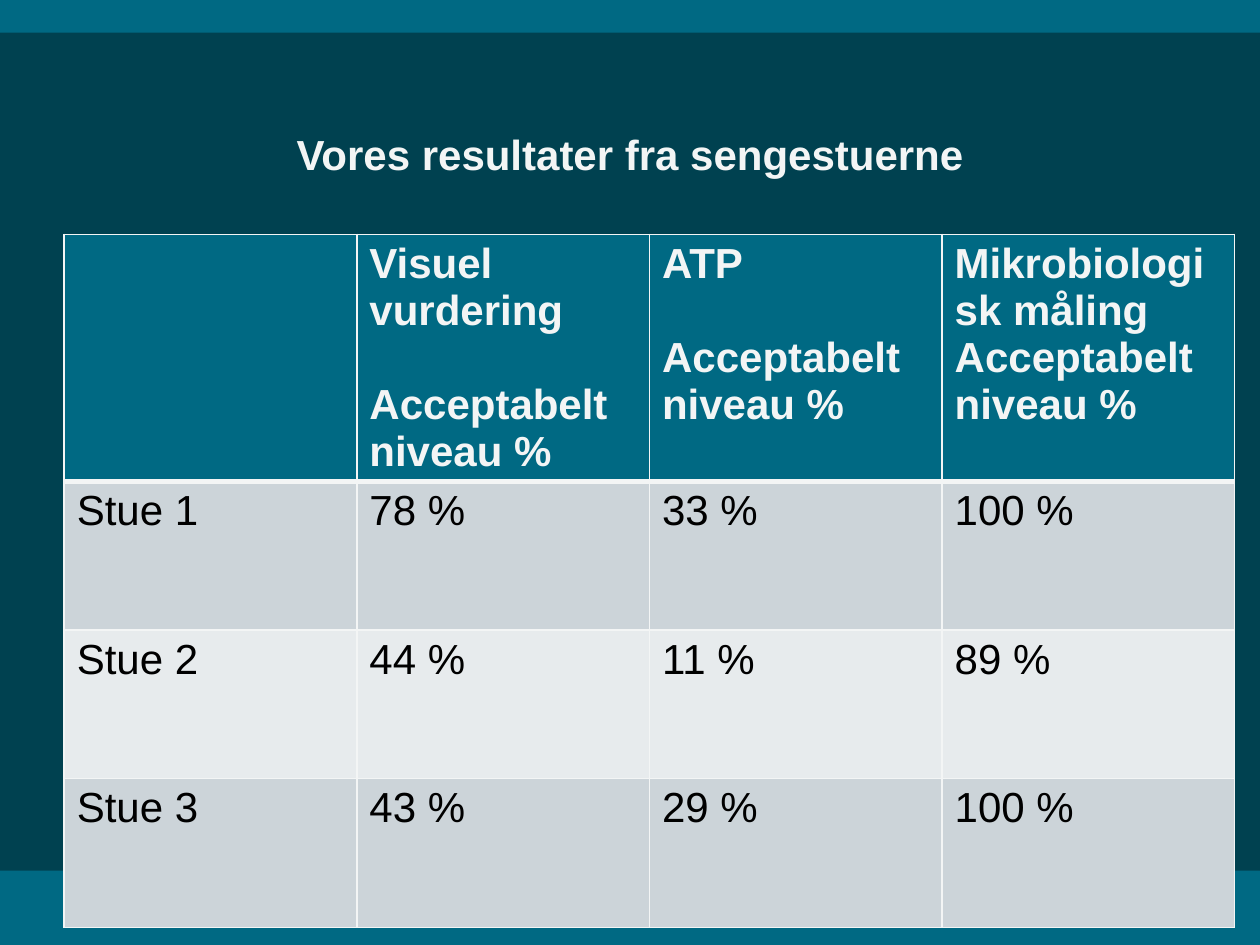
from dataclasses import dataclass

from lxml.etree import SubElement
from pptx import Presentation
from pptx.dml.color import RGBColor
from pptx.enum.shapes import MSO_SHAPE
from pptx.enum.text import MSO_ANCHOR, PP_ALIGN
from pptx.oxml.ns import qn
from pptx.util import Inches, Pt


@dataclass(frozen=True)
class Theme:
    font: str = "Arial"
    size: int = 24
    line_gap: float = 26.8
    thin: int = 1
    thick: int = 3
    dark: str = "004150"
    accent: str = "006983"
    light: str = "F3F5F5"
    text: str = "000000"
    stripes: tuple = ("CCD4D9", "E7EBED")


THEME = Theme()
WIDTH, HEIGHT = Inches(10), Inches(7.5)
TOP_BAND = Inches(0.26)
BOTTOM_BAND = Inches(0.59)
HEADER_ROW, BODY_ROW = Inches(1.96), Inches(1.18)

TITLE = "Vores resultater fra sengestuerne"
LEVEL = "Acceptabelt niveau %"
# Each heading: its paragraphs, and whether a line of space parts them
HEADINGS = [
    ([], False),
    (["Visuel vurdering", LEVEL], True),
    (["ATP", LEVEL], True),
    (["Mikrobiologisk måling", LEVEL], False),
]
RESULTS = [
    ("Stue 1", "78 %", "33 %", "100 %"),
    ("Stue 2", "44 %", "11 %", "89 %"),
    ("Stue 3", "43 %", "29 %", "100 %"),
]


def paint(fill, color):
    fill.solid()
    fill.fore_color.rgb = RGBColor.from_string(color)


def write(tf, lines, color, bold=False, gap=0, align=PP_ALIGN.LEFT):
    """Fill a text frame, with gap points before each later paragraph."""
    font_values = {"name": THEME.font, "size": Pt(THEME.size), "bold": bold}
    for i, line in enumerate(lines):
        p = tf.paragraphs[0] if i == 0 else tf.add_paragraph()
        p.alignment = align
        if i and gap:
            p.space_before = Pt(gap)
        r = p.add_run()
        r.text = line
        for name, value in font_values.items():
            setattr(r.font, name, value)
        r.font.color.rgb = RGBColor.from_string(color)


def add_band(s, box):
    sp = s.shapes.add_shape(MSO_SHAPE.RECTANGLE, *box)
    sp.shadow.inherit = False
    paint(sp.fill, THEME.accent)
    sp.line.fill.background()


def place_title(s, box):
    sp = s.shapes.title
    sp.left, sp.top, sp.width, sp.height = box
    tf = sp.text_frame
    frame_values = {"margin_left": 0, "margin_top": 0, "margin_right": 0,
                    "margin_bottom": 0, "word_wrap": True,
                    "vertical_anchor": MSO_ANCHOR.BOTTOM}
    for name, value in frame_values.items():
        setattr(tf, name, value)
    write(tf, [TITLE], THEME.light, bold=True, align=PP_ALIGN.CENTER)


def format_cell(cell, color, top, bottom):
    """Draw the borders, then the fill, in the order the format requires."""
    tc_pr = cell._tc.get_or_add_tcPr()
    widths = {"lnL": THEME.thin, "lnR": THEME.thin, "lnT": top, "lnB": bottom}
    for side, width in widths.items():
        ln = SubElement(tc_pr, qn(f"a:{side}"), w=str(Pt(width)))
        solid = SubElement(ln, qn("a:solidFill"))
        SubElement(solid, qn("a:srgbClr"), val=THEME.light)
    paint(cell.fill, color)


def add_results(s, box):
    table = s.shapes.add_table(len(RESULTS) + 1, len(HEADINGS), *box).table
    for column in table.columns:
        column.width = box[2] // len(HEADINGS)
    for i, row in enumerate(table.rows):
        row.height = BODY_ROW if i else HEADER_ROW

    for col, (lines, spaced) in enumerate(HEADINGS):
        cell = table.cell(0, col)
        format_cell(cell, THEME.accent, THEME.thin, THEME.thick)
        write(cell.text_frame, lines, THEME.light, bold=True,
              gap=THEME.line_gap if spaced else 0)

    for i, values in enumerate(RESULTS):
        for col, value in enumerate(values):
            cell = table.cell(i + 1, col)
            format_cell(cell, THEME.stripes[i % 2],
                        THEME.thin if i else THEME.thick, THEME.thin)
            write(cell.text_frame, [value], THEME.text)


def main():
    prs = Presentation()
    prs.slide_width, prs.slide_height = WIDTH, HEIGHT
    s = prs.slides.add_slide(prs.slide_layouts[5])
    paint(s.background.fill, THEME.dark)
    add_band(s, (0, 0, WIDTH, TOP_BAND))
    add_band(s, (0, HEIGHT - BOTTOM_BAND, WIDTH, BOTTOM_BAND))
    margin = Inches(0.53)
    place_title(s, (margin, TOP_BAND, WIDTH - 2 * margin, Inches(1.16)))
    add_results(s, (Inches(0.51), Inches(1.86), Inches(9.29),
                    HEADER_ROW + len(RESULTS) * BODY_ROW))
    prs.save("out.pptx")


if __name__ == "__main__":
    main()
